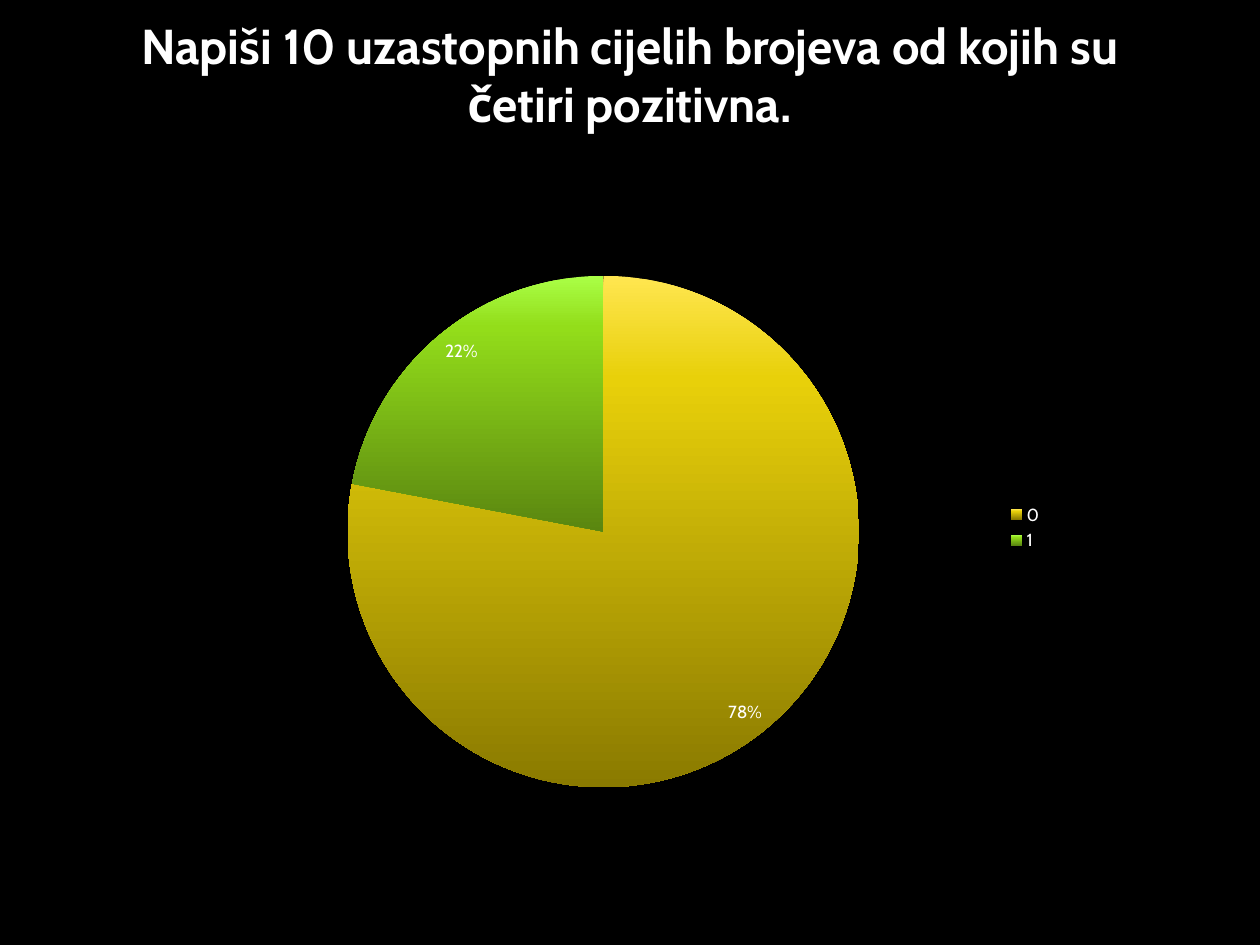
from copy import deepcopy

from pptx import Presentation
from pptx import util as u
from pptx.chart.data import CategoryChartData
from pptx.dml.color import RGBColor
from pptx.enum import chart as charts, text
from pptx.oxml import parse_xml
from pptx.oxml.ns import nsdecls, qn

COLOURS = {"background": "000000", "text": "FFFFFF"}
# Top, upper and bottom colour of each slice
SLICES = {
    "0": (78, ("FFE650", "E8D00A", "8A7A00")),
    "1": (22, ("AAFF46", "93DD1A", "5A8610")),
}
STOPS = (0, 0.2, 1)


class SlideBuilder:
    def __init__(self, deck, font="Cabin"):
        self.font = font
        self.page = deck.slides.add_slide(deck.slide_layouts[5])
        fill = self.page.background.fill
        fill.solid()
        fill.fore_color.rgb = RGBColor.from_string(COLOURS["background"])

    def style(self, font, size, bold=False):
        font.name = self.font
        font.size = u.Pt(size)
        font.bold = bold
        font.color.rgb = RGBColor.from_string(COLOURS["text"])

    def title(self, wording, left, top, width, height):
        box = self.page.shapes.title
        box.left, box.top = u.Pt(left), u.Pt(top)
        box.width, box.height = u.Pt(width), u.Pt(height)
        frame = box.text_frame
        frame.text = wording
        frame.word_wrap = True
        frame.auto_size = text.MSO_AUTO_SIZE.NONE
        frame.vertical_anchor = text.MSO_ANCHOR.TOP
        frame.margin_top = 0
        para = frame.paragraphs[0]
        para.alignment = text.PP_ALIGN.CENTER
        para.line_spacing = 1.0
        self.style(para.runs[0].font, 28, bold=True)

    def pie(self, slices, left, top, width, height):
        data = CategoryChartData()
        data.categories = list(slices)
        data.add_series("Series 1", [value for value, _ in slices.values()])
        chart = self.page.shapes.add_chart(
            charts.XL_CHART_TYPE.PIE,
            u.Pt(left), u.Pt(top), u.Pt(width), u.Pt(height), data,
        ).chart
        chart.has_title = False
        self.style(chart.font, 10)

        chart.has_legend = True
        chart.legend.position = charts.XL_LEGEND_POSITION.RIGHT
        chart.legend.include_in_layout = False
        self.style(chart.legend.font, 10)

        plot = chart.plots[0]
        plot.vary_by_categories = True
        plot.has_data_labels = True
        labels = plot.data_labels
        labels.show_percentage = True
        labels.show_value = False
        labels.number_format = "0%"
        labels.number_format_is_linked = False
        labels.position = charts.XL_LABEL_POSITION.INSIDE_END
        self.style(labels.font, 10)

        for index, (_, shades) in enumerate(slices.values()):
            self.shade(plot.series[0].points[index].format.fill, shades, chart)
        area = chart.element.find(".//" + qn("c:plotArea"))
        self.place(area, 0, inner=True, x=0.23, y=0.03, w=0.49, h=0.94)
        legend = chart.element.find(".//" + qn("c:legend"))
        self.place(legend, 1, x=0.86, y=0.44)

    def shade(self, fill, shades, chart):
        """Give the newest gradient in the chart three vertical stops."""
        fill.gradient()
        fill.gradient_angle = 270
        stops = list(chart.element.iter(qn("a:gsLst")))[-1]
        stops.insert(1, deepcopy(stops[0]))
        for stop, position, shade in zip(fill.gradient_stops, STOPS, shades):
            stop.position = position
            stop.color.rgb = RGBColor.from_string(shade)

    def place(self, part, index, inner=False, **sizes):
        """Fix a chart part at fractions of the chart area."""
        for old in part.findall(qn("c:layout")):
            part.remove(old)
        target = '<c:layoutTarget val="inner"/>' if inner else ""
        modes = "".join(f'<c:{key}Mode val="edge"/>' for key in "xy")
        values = "".join(f'<c:{key} val="{val}"/>' for key, val in sizes.items())
        part.insert(index, parse_xml(
            f"<c:layout {nsdecls('c')}><c:manualLayout>"
            f"{target}{modes}{values}</c:manualLayout></c:layout>"))


def main():
    deck = Presentation()
    deck.slide_width, deck.slide_height = u.Pt(720), u.Pt(540)
    builder = SlideBuilder(deck)
    builder.title(
        "Napiši 10 uzastopnih cijelih brojeva od kojih su četiri pozitivna.",
        61.2, 8.64, 597, 130.3)
    builder.pie(SLICES, 61.2, 148.3, 597, 311)
    deck.save("out.pptx")


if __name__ == "__main__":
    main()
